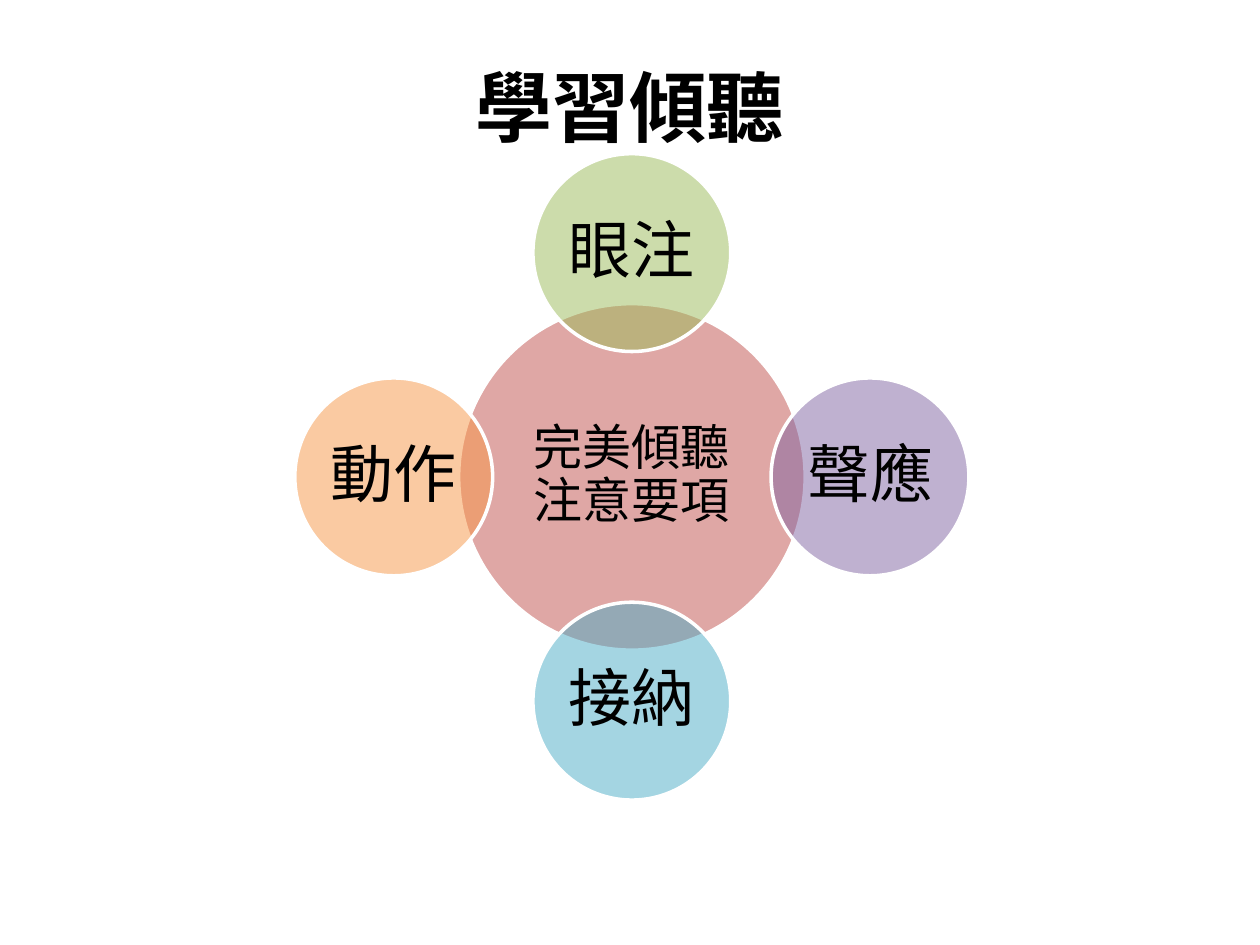
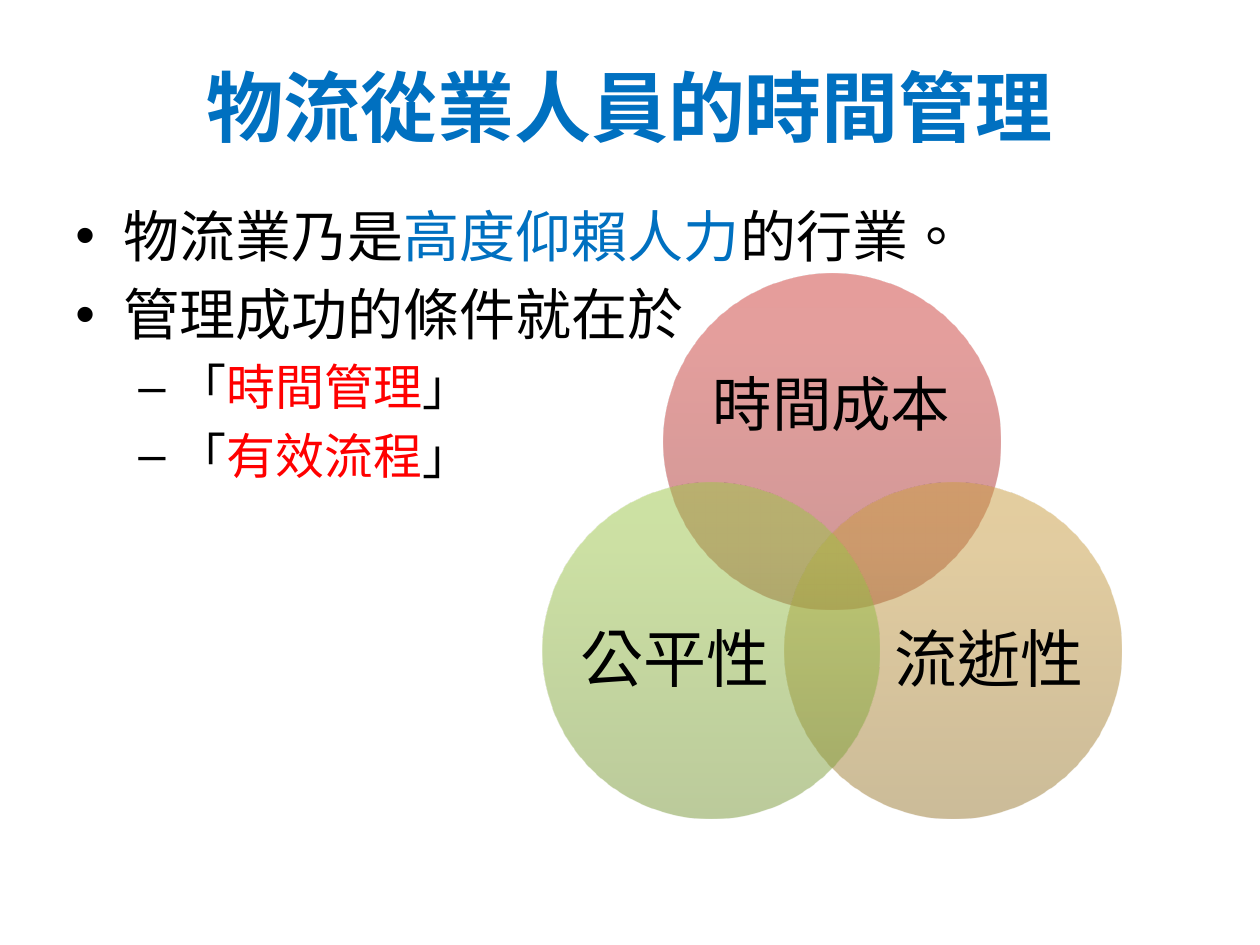
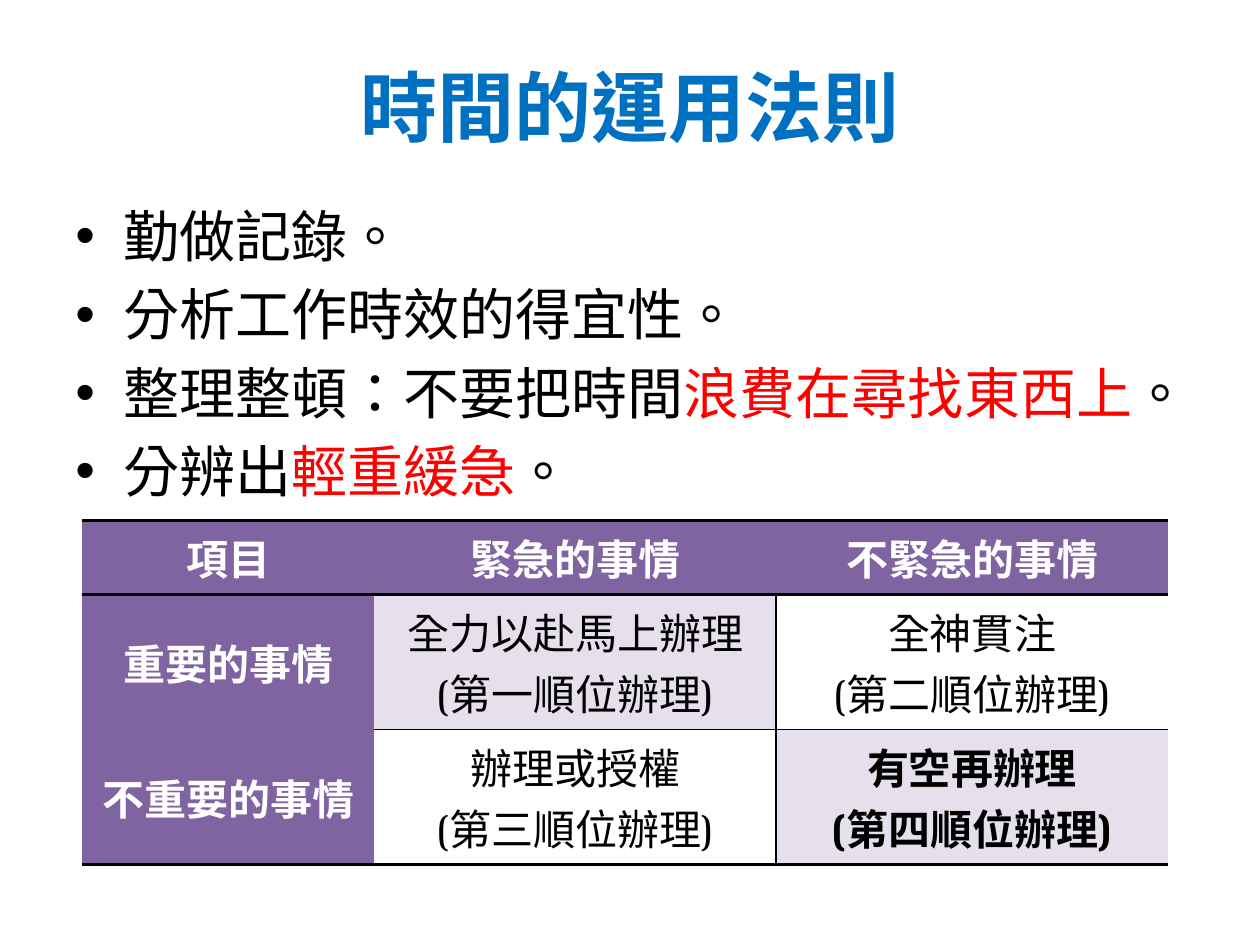
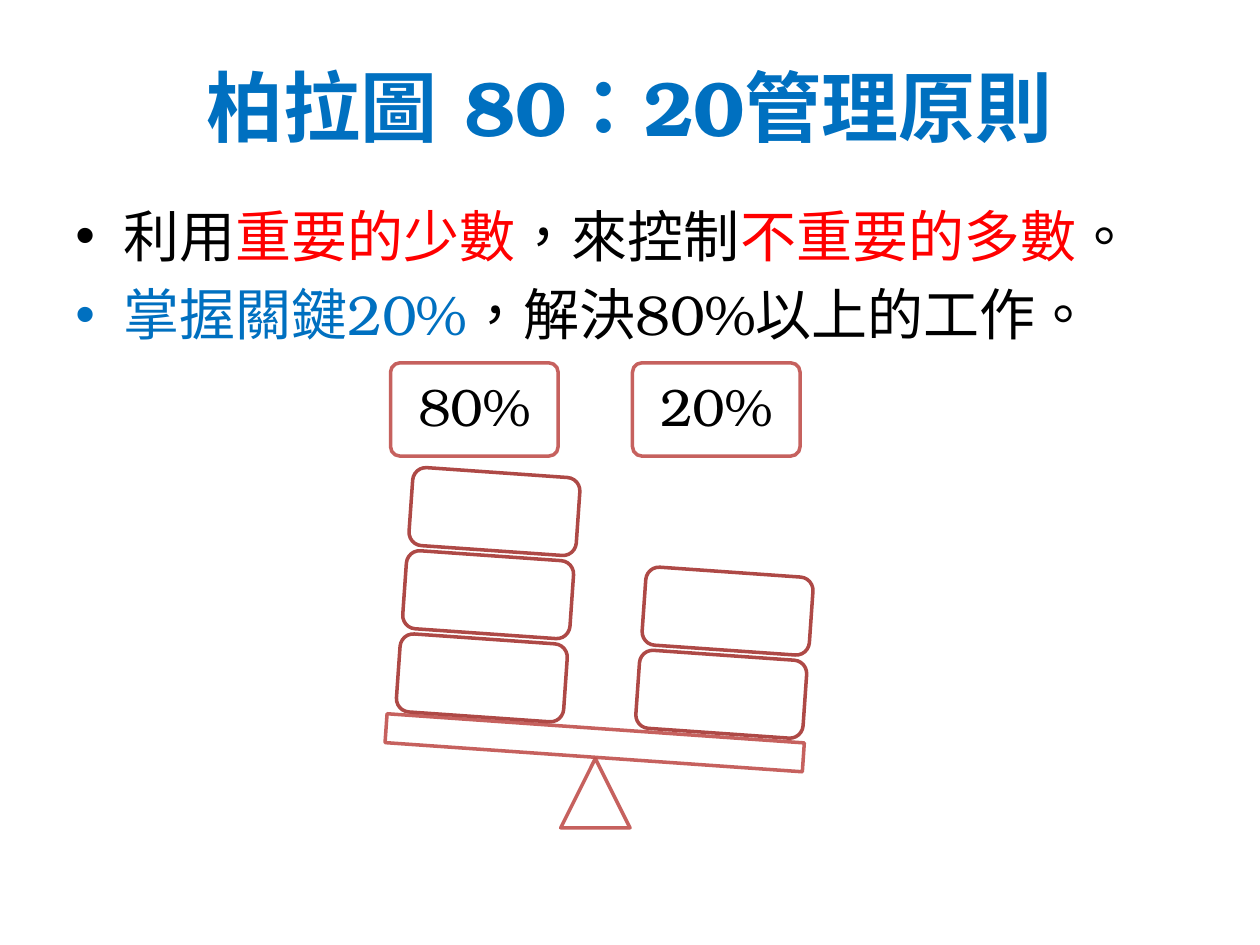
from typing import NamedTuple

from lxml import etree
from pptx import Presentation
from pptx import util as u
from pptx.dml import color
from pptx.enum import shapes, text
from pptx.oxml import ns

# Shared look: 100 px to the inch
SCALE = 9144
FONT = "TeX Gyre Bonum"
BLACK, WHITE, BLUE, RED = "000000", "FFFFFF", "0070C0", "FF0000"
PURPLE, LILAC, BRICK, RUST = "8064A2", "E6E0EC", "C0504D", "AE4946"
KIND = shapes.MSO_SHAPE


class Box(NamedTuple):
    x: int
    y: int
    w: int
    h: int


class Span(NamedTuple):
    words: str
    ink: str = BLACK


class Item(NamedTuple):
    spans: list[Span]
    level: int = 0


class Level(NamedTuple):
    mark: str
    left: int
    hang: int
    size: int


class Ring(NamedTuple):
    """A disc of the Venn diagram with its caption."""
    x: int
    y: int
    stops: tuple[str, str, str]
    words: str
    cap: Box
    size: int


class Node(NamedTuple):
    """A satellite of the hub, by its direction from the centre."""
    words: str
    ink: str
    dx: int
    dy: int


TITLE = Box(50, 21, 900, 125)
BODY = Box(50, 155, 900, 495)
LEVELS = [Level("•", 38, 38, 32), Level("–", 81, 31, 28)]


def px(n: int) -> int:
    return u.Emu(n * SCALE)


def rgb(ink: str) -> color.RGBColor:
    return color.RGBColor.from_string(ink)


def sub(node, tag: str, **attrs: str):
    return etree.SubElement(node, ns.qn(tag), **attrs)


# Text
def add_run(para, span: Span, size: int, bold: bool = False, east: bool = True) -> None:
    run = para.add_run()
    run.text = span.words
    font = run.font
    font.size, font.bold, font.name = u.Pt(size), bold, FONT
    font.color.rgb = rgb(span.ink)
    props = run._r.get_or_add_rPr()
    props.set("lang", "zh-TW")
    if east:
        sub(props, "a:ea", typeface=FONT)


def set_frame(frame, pad: int | None = None, mid: bool = True) -> None:
    frame.word_wrap = True
    frame.vertical_anchor = text.MSO_ANCHOR.MIDDLE if mid else text.MSO_ANCHOR.TOP
    if pad is not None:
        frame.margin_left = frame.margin_right = px(pad)
        frame.margin_top = frame.margin_bottom = px(pad)


def add_box(slide, box: Box):
    return slide.shapes.add_textbox(*map(px, box)).text_frame


def write(frame, words: str, size: int, pad: int) -> None:
    set_frame(frame, pad)
    para = frame.paragraphs[0]
    para.alignment = text.PP_ALIGN.CENTER
    para.line_spacing = 0.9
    add_run(para, Span(words), size)


def add_slide(deck, title: str, ink: str = BLUE):
    slide = deck.slides.add_slide(deck.slide_layouts[6])
    frame = add_box(slide, TITLE)
    set_frame(frame)
    para = frame.paragraphs[0]
    para.alignment = text.PP_ALIGN.CENTER
    add_run(para, Span(title, ink), 44, True)
    return slide


def add_list(slide, items: list[Item]) -> None:
    frame = add_box(slide, BODY)
    set_frame(frame, mid=False)
    for i, item in enumerate(items):
        para = frame.add_paragraph() if i else frame.paragraphs[0]
        level = LEVELS[item.level]
        para.level = item.level
        props = para._p.get_or_add_pPr()
        props.set("marL", str(px(level.left)))
        props.set("indent", str(-px(level.hang)))
        sub(props, "a:buFont", typeface="Arial")
        sub(props, "a:buChar", char=level.mark)
        if i:
            para.space_before = u.Pt(level.size * 0.2)
        for span in item.spans:
            add_run(para, span, level.size)


# Shapes
def fade(props, alpha: int) -> None:
    for tint in props.iter(ns.qn("a:srgbClr")):
        sub(tint, "a:alpha", val=str(alpha * 1000))


def add_form(slide, kind, box: Box, fill: str | tuple[str, ...], line: str | None = None,
             turn: int = 0, alpha: int = 100):
    form = slide.shapes.add_shape(kind, *map(px, box))
    props = form._element.spPr
    if isinstance(fill, str):
        form.fill.solid()
        form.fill.fore_color.rgb = rgb(fill)
    else:
        grad = sub(props, "a:gradFill", rotWithShape="1")
        stops = sub(grad, "a:gsLst")
        for pos, ink in zip((0, 80, 100), fill):
            sub(sub(stops, "a:gs", pos=str(pos * 1000)), "a:srgbClr", val=ink)
        sub(grad, "a:lin", ang="16200000", scaled="0")
    if line:
        form.line.color.rgb = rgb(line)
        form.line.width = u.Pt(2)
    else:
        form.line.fill.background()
    if alpha < 100:
        fade(props, alpha)
    form.rotation = turn
    form.shadow.inherit = False
    return form


# Slide 1: hub with four satellites
def around(x: int, y: int, size: int) -> Box:
    return Box(x - size // 2, y - size // 2, size, size)


def add_disc(slide, x: int, y: int, size: int, inner: int, ink: str,
             words: str, points: int, pad: int) -> None:
    disc = add_form(slide, KIND.OVAL, around(x, y, size), ink, WHITE)
    fade(disc._element.spPr.find(ns.qn("a:solidFill")), 50)
    write(add_box(slide, around(x, y, inner)), words, points, pad)


def listen(deck) -> None:
    slide = add_slide(deck, "學習傾聽", BLACK)
    x, y = 501, 378
    add_disc(slide, x, y, 275, 194, BRICK, "完美傾聽注意要項", 28, 4)
    for node in (Node("眼注", "9BBB59", 0, -1), Node("聲應", PURPLE, 1, 0),
                 Node("接納", "4BACC6", 0, 1), Node("動作", "F79646", -1, 0)):
        add_disc(slide, x + 189 * node.dx, y + 178 * node.dy, 157, 111,
                 node.ink, node.words, 36, 5)


# Slide 2: list and Venn diagram
def manage(deck) -> None:
    slide = add_slide(deck, "物流從業人員的時間管理")
    add_list(slide, [
        Item([Span("物流業乃是"), Span("高度仰賴人力", BLUE), Span("的行業。")]),
        Item([Span("管理成功的條件就在於")]),
        *(Item([Span("「"), Span(words, RED), Span("」")], 1)
          for words in ("時間管理", "有效流程")),
    ])
    for ring in (
        Ring(527, 217, ("9C2F2D", "CB3E3A", "CE3B37"), "時間成本", Box(562, 263, 196, 120), 34),
        Ring(623, 383, ("997832", "C79C41", "CB9D3F"), "流逝性", Box(705, 452, 160, 147), 36),
        Ring(431, 383, ("779737", "9BC348", "9DC746"), "公平性", Box(456, 452, 160, 147), 36),
    ):
        add_form(slide, KIND.OVAL, Box(ring.x, ring.y, 267, 267), ring.stops, alpha=50)
        write(add_box(slide, ring.cap), ring.words, ring.size, 0)


# Slide 3: list and priority table
def flat(row: int, col: int) -> int:
    """Width of the rule above a cell."""
    return 2 if row in (0, 1, 3) else int(col > 0)


def tall(row: int, col: int) -> int:
    """Width of the rule left of a cell."""
    return int(row > 0 and col == 2)


def set_rules(cell, row: int, col: int) -> None:
    props = cell._tc.get_or_add_tcPr()
    rules = (("L", tall(row, col)), ("R", tall(row, col + 1)),
             ("T", flat(row, col)), ("B", flat(row + 1, col)))
    for i, (side, width) in enumerate(rules):
        line = sub(props, f"a:ln{side}", w=str(u.Pt(width)))
        if width:
            sub(sub(line, "a:solidFill"), "a:srgbClr", val=BLACK)
        else:
            sub(line, "a:noFill")
        props.insert(i, line)


def add_grid(slide) -> None:
    cells = [
        [["項目"], ["緊急的事情"], ["不緊急的事情"]],
        [["重要的事情"], ["全力以赴馬上辦理", "(第一順位辦理)"], ["全神貫注", "(第二順位辦理)"]],
        [["不重要的事情"], ["辦理或授權", "(第三順位辦理)"], ["有空再辦理", "(第四順位辦理)"]],
    ]
    wide, high = (232, 319, 311), (59, 107, 107)
    grid = slide.shapes.add_table(3, 3, *map(px, (65, 413, sum(wide), sum(high)))).table
    for col, width in zip(grid.columns, wide):
        col.width = px(width)
    for row, height in zip(grid.rows, high):
        row.height = px(height)
    for r, row in enumerate(cells):
        for c, lines in enumerate(row):
            cell = grid.cell(r, c)
            head = r == 0 or c == 0
            cell.fill.solid()
            cell.fill.fore_color.rgb = rgb(PURPLE if head else LILAC if r == c else WHITE)
            cell.vertical_anchor = text.MSO_ANCHOR.MIDDLE
            set_rules(cell, r, c)
            for i, words in enumerate(lines):
                frame = cell.text_frame
                para = frame.add_paragraph() if i else frame.paragraphs[0]
                para.alignment = text.PP_ALIGN.CENTER
                add_run(para, Span(words, WHITE if head else BLACK), 24,
                        head or r == c == 2, east=False)


def spend(deck) -> None:
    slide = add_slide(deck, "時間的運用法則")
    add_list(slide, [
        Item([Span("勤做記錄。")]),
        Item([Span("分析工作時效的得宜性。")]),
        Item([Span("整理整頓：不要把時間"), Span("浪費在尋找東西上", RED), Span("。")]),
        Item([Span("分辨出"), Span("輕重緩急", RED), Span("。")]),
    ])
    add_grid(slide)


# Slide 4: list and tilted balance
def weigh(deck) -> None:
    slide = add_slide(deck, "柏拉圖 80：20管理原則")
    add_list(slide, [
        Item([Span("利用"), Span("重要的少數", RED), Span("，來控制"),
              Span("不重要的多數", RED), Span("。")]),
        Item([Span("掌握關鍵20%", BLUE), Span("，解決80%以上的工作。")]),
    ])
    tilt = 4
    for x, words in ((310, "80%"), (502, "20%")):
        label = add_form(slide, KIND.ROUNDED_RECTANGLE, Box(x, 288, 133, 74),
                         WHITE, BRICK, alpha=90)
        label.adjustments[0] = 0.1
        write(label.text_frame, words, 30, 15)
    add_form(slide, KIND.ISOSCELES_TRIANGLE, Box(445, 602, 55, 55), WHITE, BRICK, alpha=90)
    add_form(slide, KIND.RECTANGLE, Box(306, 578, 332, 23), WHITE, BRICK, tilt, 90)
    for x, y, count in ((506, 520, 2), (316, 507, 3)):
        for i in range(count):
            load = add_form(slide, KIND.ROUNDED_RECTANGLE,
                            Box(x + 5 * i, y - 66 * i, 133, 62), WHITE, RUST, tilt)
            load.adjustments[0] = 0.17


def main() -> None:
    deck = Presentation()
    deck.slide_width, deck.slide_height = px(1000), px(750)
    for build in (listen, manage, spend, weigh):
        build(deck)
    deck.save("out.pptx")


if __name__ == "__main__":
    main()
